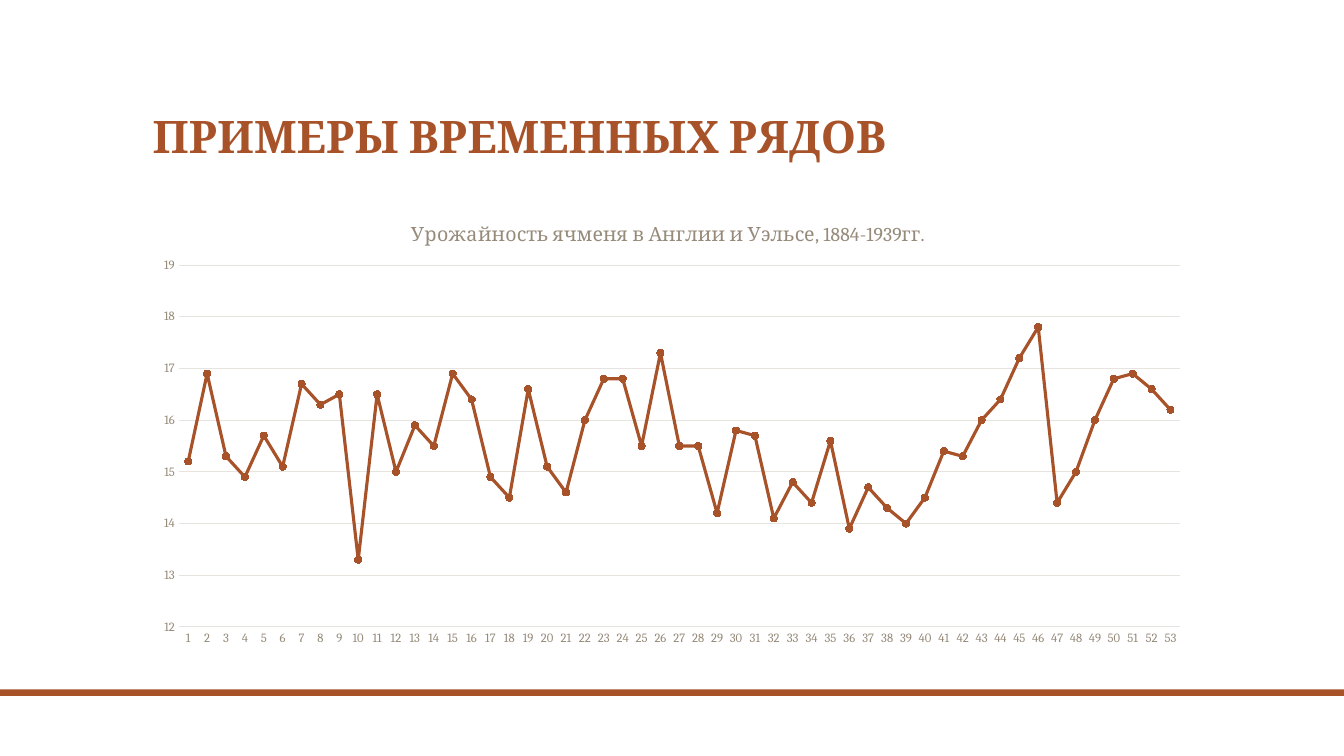
import pptx
import pptx.util
import pptx.chart.data
import pptx.dml.color
import pptx.enum.chart
import pptx.enum.shapes
import pptx.enum.text
import pptx.oxml

Pt = pptx.util.Pt
enum = pptx.enum
FONT = "Cambria"
COLORS = {"rust": "A85229", "label": "968B7A", "grid": "E7E4E0", "text": "514A40"}
YIELDS = [
    15.2, 16.9, 15.3, 14.9, 15.7, 15.1, 16.7, 16.3, 16.5, 13.3, 16.5,
    15, 15.9, 15.5, 16.9, 16.4, 14.9, 14.5, 16.6, 15.1, 14.6, 16,
    16.8, 16.8, 15.5, 17.3, 15.5, 15.5, 14.2, 15.8, 15.7, 14.1, 14.8,
    14.4, 15.6, 13.9, 14.7, 14.3, 14, 14.5, 15.4, 15.3, 16, 16.4,
    17.2, 17.8, 14.4, 15, 16, 16.8, 16.9, 16.6, 16.2,
]


def style(font, size, color, bold=False):
    font.name = FONT
    font.size = Pt(size)
    font.bold = bold
    font.color.rgb = pptx.dml.color.RGBColor.from_string(COLORS[color])


def paint(fill, color):
    fill.solid()
    fill.fore_color.rgb = pptx.dml.color.RGBColor.from_string(COLORS[color])


deck = pptx.Presentation()
deck.slide_width = Pt(960)
deck.slide_height = Pt(540)
slide = deck.slides.add_slide(deck.slide_layouts[6])

bar = slide.shapes.add_shape(
    enum.shapes.MSO_SHAPE.RECTANGLE, Pt(0), Pt(492.5), Pt(960), Pt(4.5))
bar.shadow.inherit = False
paint(bar.fill, "rust")
bar.line.fill.background()

box = slide.shapes.add_textbox(Pt(102), Pt(30), Pt(756), Pt(90))
frame = box.text_frame
frame.word_wrap = True
frame.vertical_anchor = enum.text.MSO_ANCHOR.BOTTOM
head = frame.paragraphs[0]
head.text = "ПРИМЕРЫ ВРЕМЕННЫХ РЯДОВ"
head.line_spacing = 0.9
style(head.font, 32, "rust", True)

data = pptx.chart.data.CategoryChartData()
data.categories = [str(year + 1) for year in range(len(YIELDS))]
data.add_series("Series 1", YIELDS)
chart = slide.shapes.add_chart(
    enum.chart.XL_CHART_TYPE.LINE_MARKERS,
    Pt(102), Pt(144), Pt(756), Pt(324), data).chart
style(chart.font, 10, "text")
chart.has_legend = False
title = chart.chart_title
title.text_frame.text = "Урожайность ячменя в Англии и Уэльсе, 1884-1939гг."
style(title.text_frame.paragraphs[0].font, 14, "label")
title.include_in_layout = False

across, up = chart.category_axis, chart.value_axis
for axis in (across, up):
    axis.major_tick_mark = enum.chart.XL_TICK_MARK.NONE
    axis.minor_tick_mark = enum.chart.XL_TICK_MARK.NONE
    style(axis.tick_labels.font, 9, "label")
up.minimum_scale = 12
up.maximum_scale = 19
up.major_unit = 1
up.format.line.fill.background()
up.has_major_gridlines = True
for line in (across.format.line, up.major_gridlines.format.line):
    paint(line.fill, "grid")
    line.width = Pt(0.75)

plot = chart.plots[0]
plot.vary_by_categories = False
crop = plot.series[0]
crop.smooth = False
paint(crop.format.line.fill, "rust")
crop.format.line.width = Pt(2.25)
crop.marker.style = enum.chart.XL_MARKER_STYLE.CIRCLE
crop.marker.size = 5
paint(crop.marker.format.fill, "rust")
paint(crop.marker.format.line.fill, "rust")

NS = "http://schemas.openxmlformats.org/drawingml/2006/chart"
area = chart._chartSpace.chart.plotArea
spots = [
    (title._element, {"xMode": "edge", "yMode": "edge", "x": 0.25, "y": 0.035}),
    (area, {"layoutTarget": "inner", "xMode": "edge", "yMode": "edge",
            "x": 0.034, "y": 0.14, "w": 0.946, "h": 0.798}),
]
for part, marks in spots:
    for old in part.findall(f"{{{NS}}}layout"):
        part.remove(old)
    body = "".join(f'<c:{key} val="{val}"/>' for key, val in marks.items())
    layout = pptx.oxml.parse_xml(
        f'<c:layout xmlns:c="{NS}"><c:manualLayout>{body}</c:manualLayout></c:layout>')
    part.insert(0 if part is area else 1, layout)

deck.save("out.pptx")
